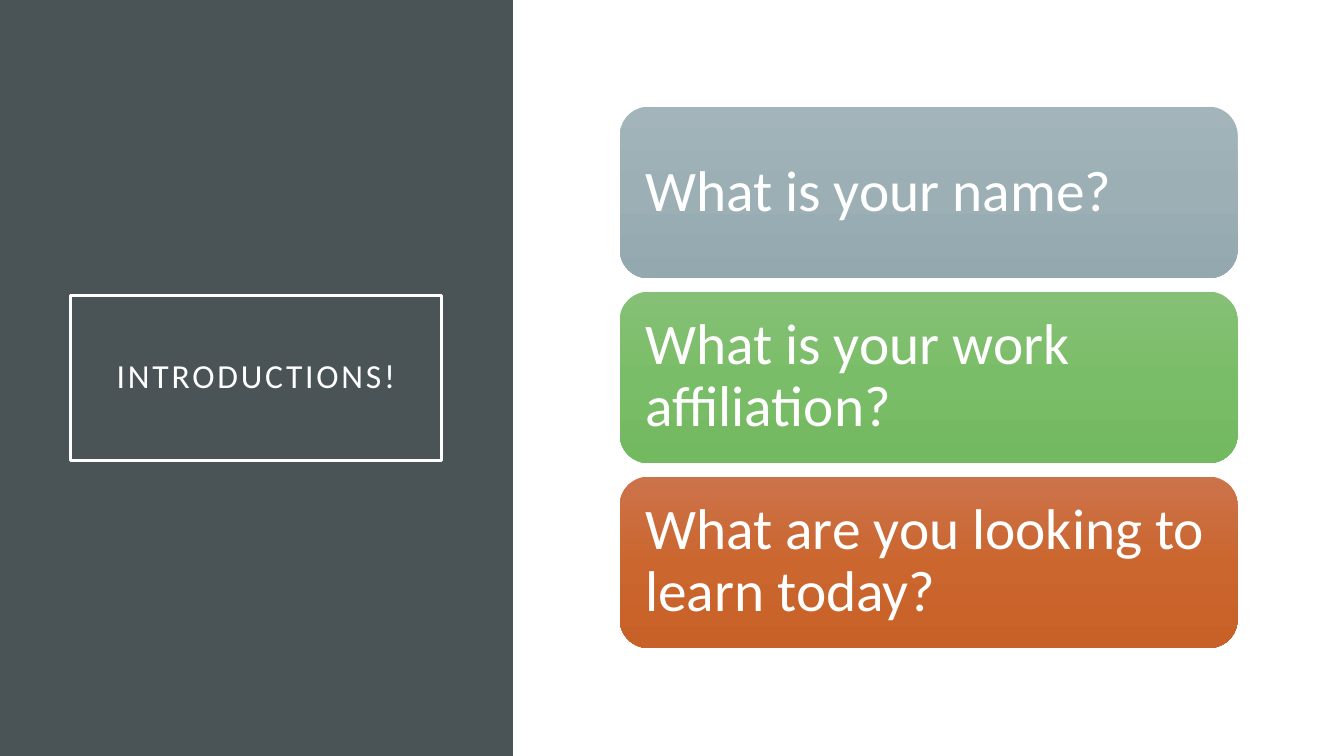
import copy

import pptx
import pptx.dml.color
import pptx.enum.shapes
import pptx.enum.text
import pptx.util
from pptx.util import Cm

COLORS = {
    "panel": "4A5356",
    "white": "FFFFFF",
    "gray": ("A3B5BB", "9BAFB5", "93A9AF"),
    "green": ("85C076", "7ABD68", "73B960"),
    "orange": ("CC734B", "CB662F", "C86128"),
}
QUESTIONS = [
    ("What is your name?", "gray"),
    ("What is your work affiliation?", "green"),
    ("What are you looking to learn today?", "orange"),
]
CARD_LEFT, CARD_TOP, CARD_WIDTH, CARD_HEIGHT = 15.62, 2.69, 15.57, 4.32
CARD_PITCH = 4.66


def rgb(value):
    return pptx.dml.color.RGBColor.from_string(value)


def set_text(shape, text, size, align, inset, spacing=None):
    """Fill a shape with one formatted paragraph, centred vertically."""
    frame = shape.text_frame
    frame.text = text
    frame.word_wrap = True
    frame.auto_size = pptx.enum.text.MSO_AUTO_SIZE.NONE
    frame.vertical_anchor = pptx.enum.text.MSO_ANCHOR.MIDDLE
    frame.margin_left = frame.margin_right = Cm(inset)
    frame.margin_top = frame.margin_bottom = Cm(inset)
    paragraph = frame.paragraphs[0]
    paragraph.alignment = align
    paragraph.line_spacing = 0.9
    paragraph.space_before = pptx.util.Pt(0)
    font = paragraph.runs[0].font
    font.name = "Calibri"
    font.size = pptx.util.Pt(size)
    font.color.rgb = rgb(COLORS["white"])
    if spacing is not None:
        # Letter spacing is stored in hundredths of a point
        paragraph.runs[0].font._element.set("spc", str(spacing * 100))


def set_gradient(shape, colors):
    """Apply a three-stop gradient running from top to bottom."""
    fill = shape.fill
    fill.gradient()
    fill.gradient_angle = 270
    stop_list = shape.element.spPr.find(".//" + pptx.oxml.ns.qn("a:gsLst"))
    stop_list.insert(1, copy.deepcopy(stop_list[0]))
    for index, (stop, color) in enumerate(zip(fill.gradient_stops, colors)):
        stop.position = index / 2
        stop.color.rgb = rgb(color)


def add_block(slide, kind, left, top, width, height):
    shape = slide.shapes.add_shape(kind, Cm(left), Cm(top), Cm(width), Cm(height))
    shape.shadow.inherit = False
    shape.line.fill.background()
    return shape


def add_panel(slide):
    panel = add_block(slide, pptx.enum.shapes.MSO_SHAPE.RECTANGLE, 0, 0, 12.93, 19.05)
    panel.fill.solid()
    panel.fill.fore_color.rgb = rgb(COLORS["panel"])
    # Keep the panel behind the title
    slide.shapes.title.element.addprevious(panel.element)


def format_title(slide, text):
    title = slide.shapes.title
    title.left, title.top = Cm(1.78), Cm(7.44)
    title.width, title.height = Cm(9.35), Cm(4.17)
    title.line.color.rgb = rgb(COLORS["white"])
    title.line.width = pptx.util.Pt(2.5)
    set_text(title, text, size=24, align=pptx.enum.text.PP_ALIGN.CENTER,
             inset=0.51, spacing=2)


def add_card(slide, index, text, color):
    card = add_block(slide, pptx.enum.shapes.MSO_SHAPE.ROUNDED_RECTANGLE,
                     CARD_LEFT, CARD_TOP + index * CARD_PITCH,
                     CARD_WIDTH, CARD_HEIGHT)
    set_gradient(card, COLORS[color])
    set_text(card, text, size=41, align=pptx.enum.text.PP_ALIGN.LEFT, inset=0.43)


def main():
    presentation = pptx.Presentation()
    presentation.slide_width = Cm(33.87)
    presentation.slide_height = Cm(19.05)
    slide = presentation.slides.add_slide(presentation.slide_layouts[5])

    # Left side: dark panel with framed title
    add_panel(slide)
    format_title(slide, "INTRODUCTIONS!")

    # Right side: stacked question cards
    for index, (text, color) in enumerate(QUESTIONS):
        add_card(slide, index, text, color)

    presentation.save("out.pptx")


if __name__ == "__main__":
    main()
